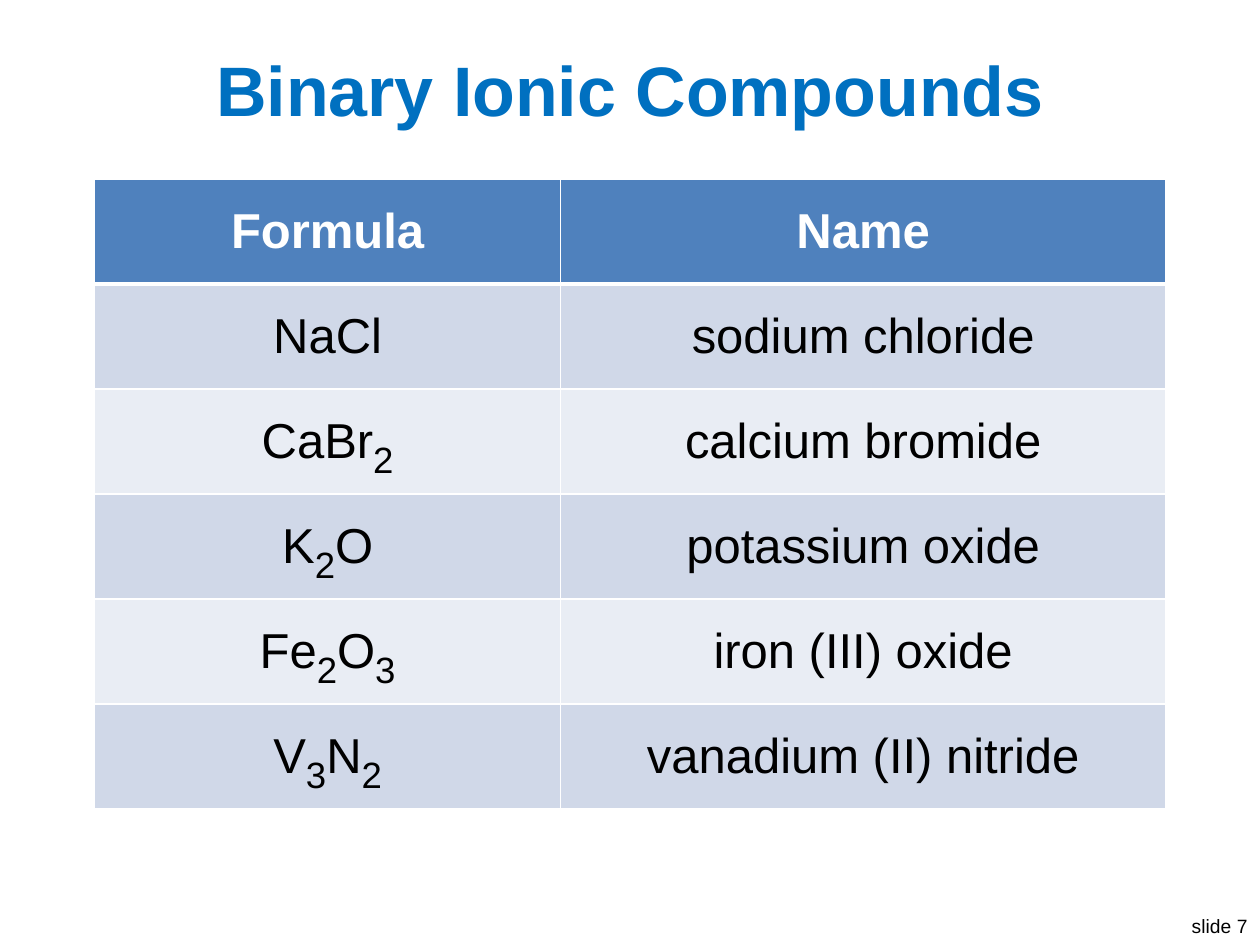
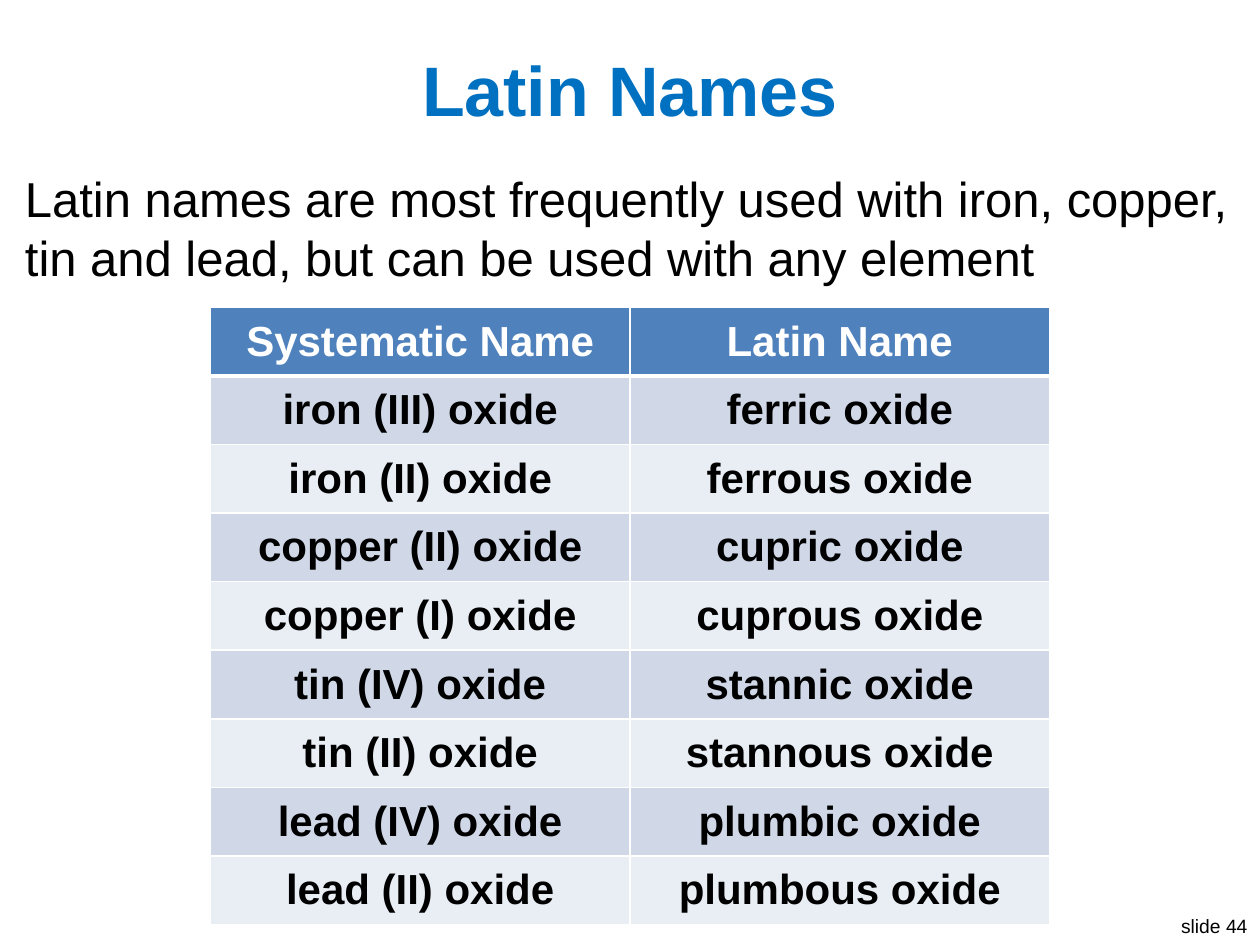
from dataclasses import dataclass
from itertools import groupby

from lxml import etree
from pptx import Presentation
from pptx.dml.color import RGBColor
from pptx.enum.text import MSO_ANCHOR, PP_ALIGN
from pptx.oxml.ns import qn
from pptx.util import Inches, Pt

LEFT, CENTER, RIGHT = PP_ALIGN.LEFT, PP_ALIGN.CENTER, PP_ALIGN.RIGHT
TOP, MIDDLE = MSO_ANCHOR.TOP, MSO_ANCHOR.MIDDLE
BLANK_LAYOUT = 6


@dataclass(frozen=True)
class Theme:
    font: str = "Arial"
    title: str = "0070C0"
    text: str = "000000"
    white: str = "FFFFFF"
    header: str = "4F81BD"
    bands: tuple[str, str] = ("D0D8E8", "E9EDF4")
    title_size: int = 40
    body_size: int = 28
    small_table_size: int = 24
    subscript_size: int = 36
    footer_size: int = 11
    grid_width: int = 1
    header_rule_width: int = 3


THEME = Theme()


@dataclass(frozen=True)
class Box:
    left: float
    top: float
    width: float
    height: float

    def lengths(self) -> tuple:
        return tuple(Inches(value) for value in (self.left, self.top, self.width, self.height))


@dataclass(frozen=True)
class TextStyle:
    size: int
    color: str = THEME.text
    bold: bool = False
    align: PP_ALIGN = LEFT
    anchor: MSO_ANCHOR = TOP
    wrap: bool = True
    space_before: int = 0


@dataclass(frozen=True)
class NameTable:
    box: Box
    columns: tuple[float, float]
    rows: tuple[tuple[str, str], ...]
    size: int
    bold_body: bool = False


@dataclass(frozen=True)
class SlideContent:
    title: str
    number: int
    table: NameTable
    body: str = ""


TITLE_BOX = Box(0.2, 0.3, 9.6, 0.8)
BODY_BOX = Box(0.1, 1.29, 9.8, 1.1)
FOOTER_BOX = Box(9.25, 7.21, 0.75, 0.29)

TITLE_STYLE = TextStyle(THEME.title_size, THEME.title, True, CENTER, MIDDLE)
BODY_STYLE = TextStyle(THEME.body_size, space_before=12)
FOOTER_STYLE = TextStyle(THEME.footer_size, align=RIGHT, wrap=False)

SLIDES = (
    SlideContent(
        title="Binary Ionic Compounds",
        number=7,
        table=NameTable(
            box=Box(0.75, 1.42, 8.5, 5),
            columns=(3.7, 4.8),
            rows=(
                ("Formula", "Name"),
                ("NaCl", "sodium chloride"),
                ("CaBr2", "calcium bromide"),
                ("K2O", "potassium oxide"),
                ("Fe2O3", "iron (III) oxide"),
                ("V3N2", "vanadium (II) nitride"),
            ),
            size=THEME.body_size,
        ),
    ),
    SlideContent(
        title="Latin Names",
        number=44,
        body="Latin names are most frequently used with iron, copper, "
             "tin and lead, but can be used with any element",
        table=NameTable(
            box=Box(1.67, 2.44, 6.66, 4.9),
            columns=(3.33, 3.33),
            rows=(
                ("Systematic Name", "Latin Name"),
                ("iron (III) oxide", "ferric oxide"),
                ("iron (II) oxide", "ferrous oxide"),
                ("copper (II) oxide", "cupric oxide"),
                ("copper (I) oxide", "cuprous oxide"),
                ("tin (IV) oxide", "stannic oxide"),
                ("tin (II) oxide", "stannous oxide"),
                ("lead (IV) oxide", "plumbic oxide"),
                ("lead (II) oxide", "plumbous oxide"),
            ),
            size=THEME.small_table_size,
            bold_body=True,
        ),
    ),
)


def write_runs(paragraph, text: str, style: TextStyle, subscript_digits: bool) -> None:
    """Write the text, lowering its digits when it may hold a formula."""
    pieces = [(False, text)]
    if subscript_digits:
        pieces = [(digit, "".join(part)) for digit, part in groupby(text, str.isdigit)]
    for lowered, piece in pieces:
        run = paragraph.add_run()
        run.text = piece
        font_values = {
            "name": THEME.font,
            "size": Pt(THEME.subscript_size if lowered else style.size),
            "bold": style.bold,
        }
        for name, value in font_values.items():
            setattr(run.font, name, value)
        run.font.color.rgb = RGBColor.from_string(style.color)
        if lowered:
            run._r.get_or_add_rPr().set("baseline", "-25000")


def fill_paragraph(paragraph, text: str, style: TextStyle, subscript_digits: bool = False) -> None:
    paragraph.alignment = style.align
    if style.space_before:
        paragraph.space_before = Pt(style.space_before)
    write_runs(paragraph, text, style, subscript_digits)


def add_text(slide, box: Box, text: str, style: TextStyle) -> None:
    frame = slide.shapes.add_textbox(*box.lengths()).text_frame
    frame.word_wrap = style.wrap
    frame.vertical_anchor = style.anchor
    fill_paragraph(frame.paragraphs[0], text, style)


def set_borders(cell, row_index: int) -> None:
    """Give the cell a white grid, with a heavier rule under the header row."""
    widths = dict.fromkeys(("lnL", "lnR", "lnT", "lnB"), THEME.grid_width)
    if row_index == 0:
        widths["lnB"] = THEME.header_rule_width
    elif row_index == 1:
        widths["lnT"] = THEME.header_rule_width
    properties = cell._tc.get_or_add_tcPr()
    for side, width in widths.items():
        line = etree.SubElement(properties, qn(f"a:{side}"), w=str(Pt(width)))
        fill = etree.SubElement(line, qn("a:solidFill"))
        etree.SubElement(fill, qn("a:srgbClr"), val=THEME.white)


def add_name_table(slide, content: NameTable) -> None:
    row_count = len(content.rows)
    table = slide.shapes.add_table(
        row_count, len(content.columns), *content.box.lengths()
    ).table
    for column, width in zip(table.columns, content.columns):
        column.width = Inches(width)
    for row in table.rows:
        row.height = Inches(content.box.height / row_count)

    header_style = TextStyle(content.size, THEME.white, True, CENTER)
    body_style = TextStyle(content.size, THEME.text, content.bold_body, CENTER)
    for row_index, texts in enumerate(content.rows):
        is_header = row_index == 0
        style = header_style if is_header else body_style
        color = THEME.header if is_header else THEME.bands[(row_index - 1) % 2]
        for column_index, text in enumerate(texts):
            cell = table.cell(row_index, column_index)
            cell.vertical_anchor = MIDDLE
            set_borders(cell, row_index)
            cell.fill.solid()
            cell.fill.fore_color.rgb = RGBColor.from_string(color)
            fill_paragraph(cell.text_frame.paragraphs[0], text, style, subscript_digits=True)


def add_content_slide(presentation, content: SlideContent) -> None:
    slide = presentation.slides.add_slide(presentation.slide_layouts[BLANK_LAYOUT])
    add_text(slide, FOOTER_BOX, f"slide {content.number}", FOOTER_STYLE)
    add_text(slide, TITLE_BOX, content.title, TITLE_STYLE)
    if content.body:
        add_text(slide, BODY_BOX, content.body, BODY_STYLE)
    add_name_table(slide, content.table)


def main() -> None:
    presentation = Presentation()
    presentation.slide_width = Inches(10)
    presentation.slide_height = Inches(7.5)
    for content in SLIDES:
        add_content_slide(presentation, content)
    presentation.save("out.pptx")


if __name__ == "__main__":
    main()
